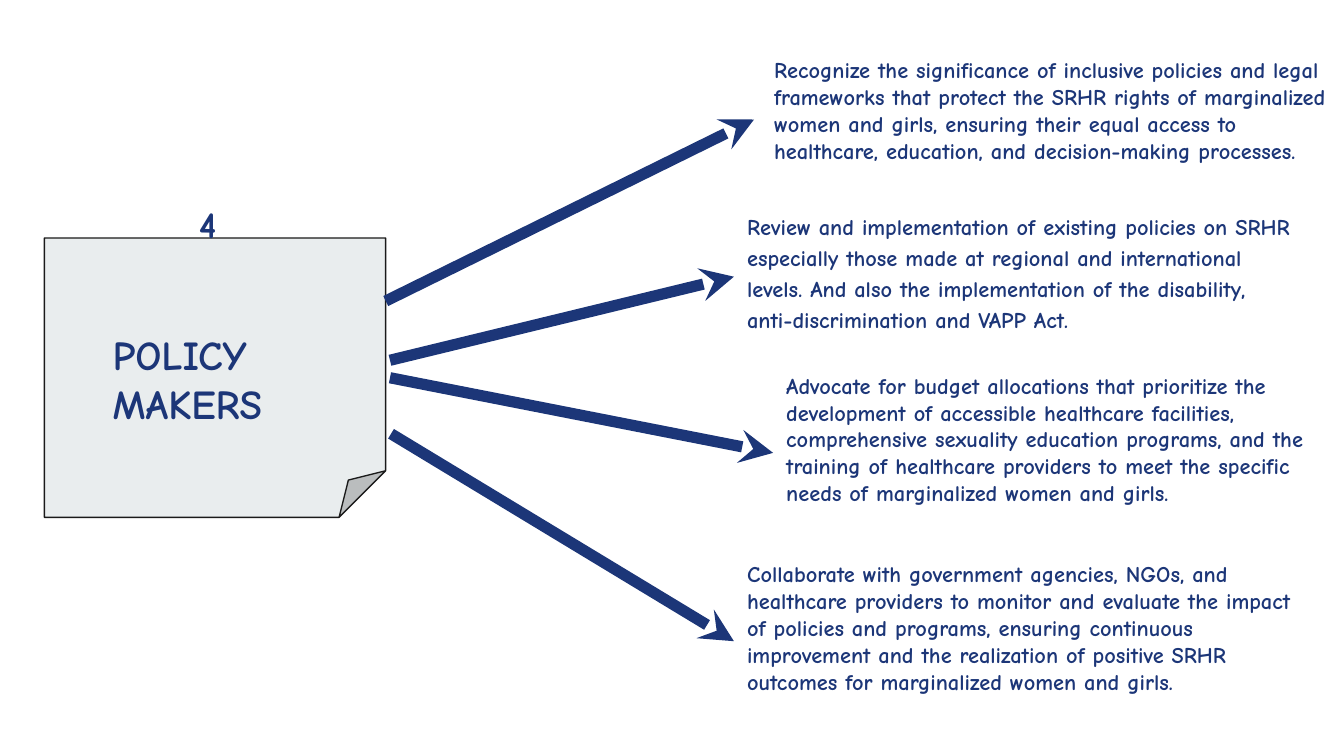
"""Build the slide on recommendations for policy makers."""
from dataclasses import dataclass

from lxml.etree import SubElement
from pptx import Presentation
from pptx.dml.color import RGBColor
from pptx.enum.shapes import MSO_CONNECTOR, MSO_SHAPE
from pptx.enum.text import MSO_ANCHOR, MSO_AUTO_SIZE, PP_ALIGN
from pptx.oxml.ns import qn
from pptx.shapes.autoshape import Shape
from pptx.slide import Slide
from pptx.util import Cm, Pt

NAVY = RGBColor(0x1C, 0x36, 0x78)
PAPER = RGBColor(0xE9, 0xED, 0xEE)
INK = RGBColor(0x1A, 0x1A, 0x1A)
FONT = "Comic Neue"
INSET = Cm(0.25)


@dataclass(frozen=True)
class Recommendation:
    """A piece of advice, its box and the arrow leading to it, in cm."""

    text: str
    box: tuple[float, float, float, float]
    start: tuple[float, float]
    end: tuple[float, float]
    line_spacing: float = 1.0


RECOMMENDATIONS = (
    Recommendation(
        "Recognize the significance of inclusive policies and legal frameworks "
        "that protect the SRHR rights of marginalized women and girls, ensuring "
        "their equal access to healthcare, education, and decision-making processes.",
        (14.38, 0.81, 11.3, 3.05), (7.29, 5.69), (14.25, 2.26),
    ),
    Recommendation(
        "Review and implementation of existing policies on SRHR especially those "
        "made at regional and international levels. And also the implementation of "
        "the disability, anti-discrimination and VAPP Act.",
        (13.87, 3.71, 10.85, 3.96), (7.37, 6.81), (13.87, 5.23), 1.15,
    ),
    Recommendation(
        "Advocate for budget allocations that prioritize the development of "
        "accessible healthcare facilities, comprehensive sexuality education "
        "programs, and the training of healthcare providers to meet the specific "
        "needs of marginalized women and girls.",
        (14.61, 6.78, 10.85, 3.56), (7.37, 7.14), (14.61, 8.56),
    ),
    Recommendation(
        "Collaborate with government agencies, NGOs, and healthcare providers to "
        "monitor and evaluate the impact of policies and programs, ensuring "
        "continuous improvement and the realization of positive SRHR outcomes for "
        "marginalized women and girls.",
        (13.87, 10.34, 10.85, 3.56), (7.39, 8.2), (13.87, 12.12),
    ),
)


def write(shape: Shape, text: str, *, size: float, line_spacing: float = 1.0) -> None:
    """Fill a shape with bold navy text, one paragraph per line."""
    frame = shape.text_frame
    frame.text = text
    frame.word_wrap = True
    frame.auto_size = MSO_AUTO_SIZE.SHAPE_TO_FIT_TEXT
    frame.vertical_anchor = MSO_ANCHOR.TOP
    frame.margin_left = frame.margin_right = INSET
    frame.margin_top = frame.margin_bottom = INSET
    for paragraph in frame.paragraphs:
        paragraph.alignment = PP_ALIGN.LEFT
        paragraph.line_spacing = line_spacing
        for run in paragraph.runs:
            run.font.name = FONT
            run.font.size = Pt(size)
            run.font.bold = True
            run.font.color.rgb = NAVY


def add_note(slide: Slide) -> None:
    """Draw the sheet with a folded corner."""
    note = slide.shapes.add_shape(
        MSO_SHAPE.FOLDED_CORNER, Cm(0.84), Cm(4.5), Cm(6.45), Cm(5.28)
    )
    note.shadow.inherit = False
    note.fill.solid()
    note.fill.fore_color.rgb = PAPER
    note.line.color.rgb = INK
    note.line.width = Pt(0.75)


def place_title(slide: Slide) -> None:
    """Put the title on top of the note."""
    title = slide.shapes.title
    title.left, title.top = Cm(1.88), Cm(5.97)
    title.width, title.height = Cm(7.24), Cm(2.39)
    write(title, "POLICY\nMAKERS", size=22)
    title.element.getparent().append(title.element)


def add_arrow(slide: Slide, start: tuple[float, float], end: tuple[float, float]) -> None:
    """Draw a thick arrow between two points."""
    arrow = slide.shapes.add_connector(
        MSO_CONNECTOR.STRAIGHT, *(Cm(value) for value in start + end)
    )
    arrow.line.color.rgb = NAVY
    arrow.line.width = Pt(6)
    properties = arrow.element.find(qn("p:spPr"))
    SubElement(properties.find(qn("a:ln")), qn("a:tailEnd"), type="stealth")
    SubElement(properties, qn("a:effectLst"))


def add_text(
    slide: Slide,
    text: str,
    box: tuple[float, float, float, float],
    *,
    size: float,
    line_spacing: float = 1.0,
) -> None:
    """Add a text box at the given place."""
    textbox = slide.shapes.add_textbox(*(Cm(value) for value in box))
    write(textbox, text, size=size, line_spacing=line_spacing)


def main() -> None:
    """Build and save the presentation."""
    presentation = Presentation()
    presentation.slide_width = Cm(25.4)
    presentation.slide_height = Cm(14.29)
    slide = presentation.slides.add_slide(presentation.slide_layouts.get_by_name("Title Only"))
    add_note(slide)
    place_title(slide)
    for advice in RECOMMENDATIONS:
        add_arrow(slide, advice.start, advice.end)
        add_text(slide, advice.text, advice.box, size=12, line_spacing=advice.line_spacing)
    add_text(slide, "4", (3.51, 3.56, 16.79, 1.37), size=20)
    presentation.save("out.pptx")


if __name__ == "__main__":
    main()
